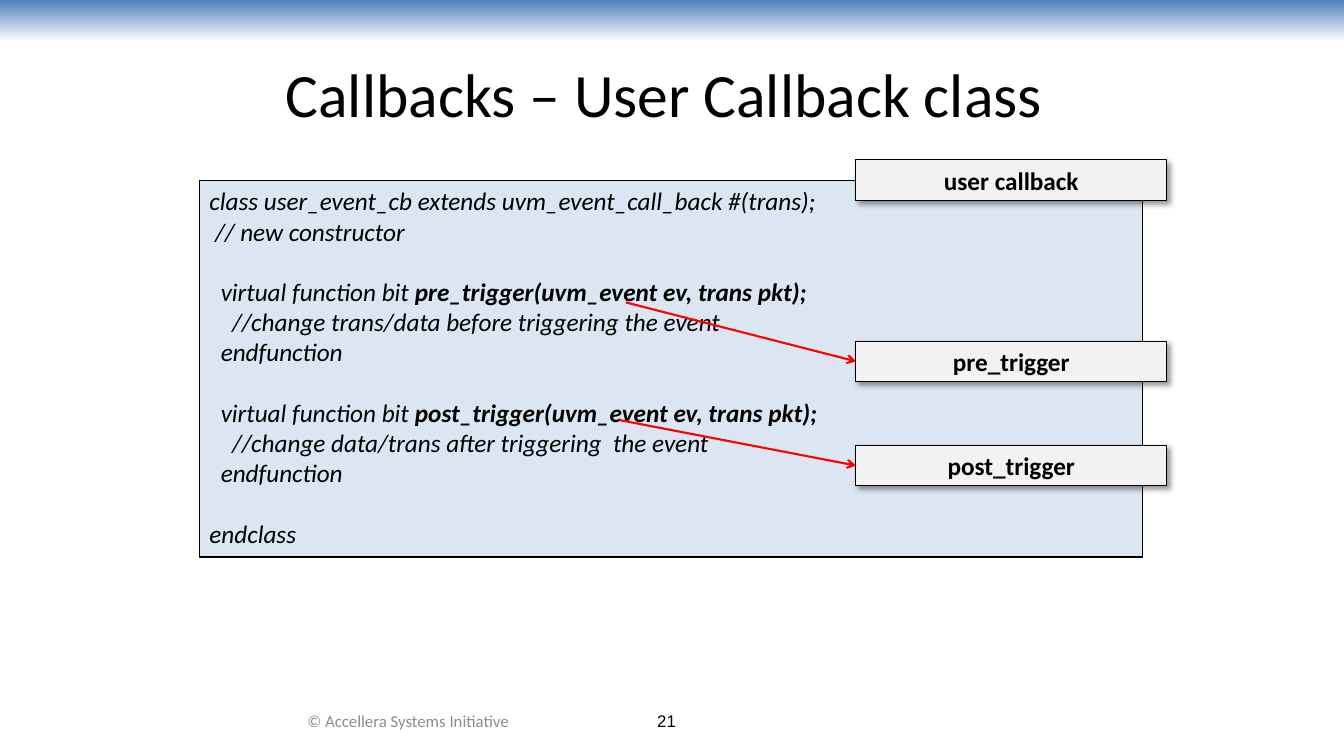
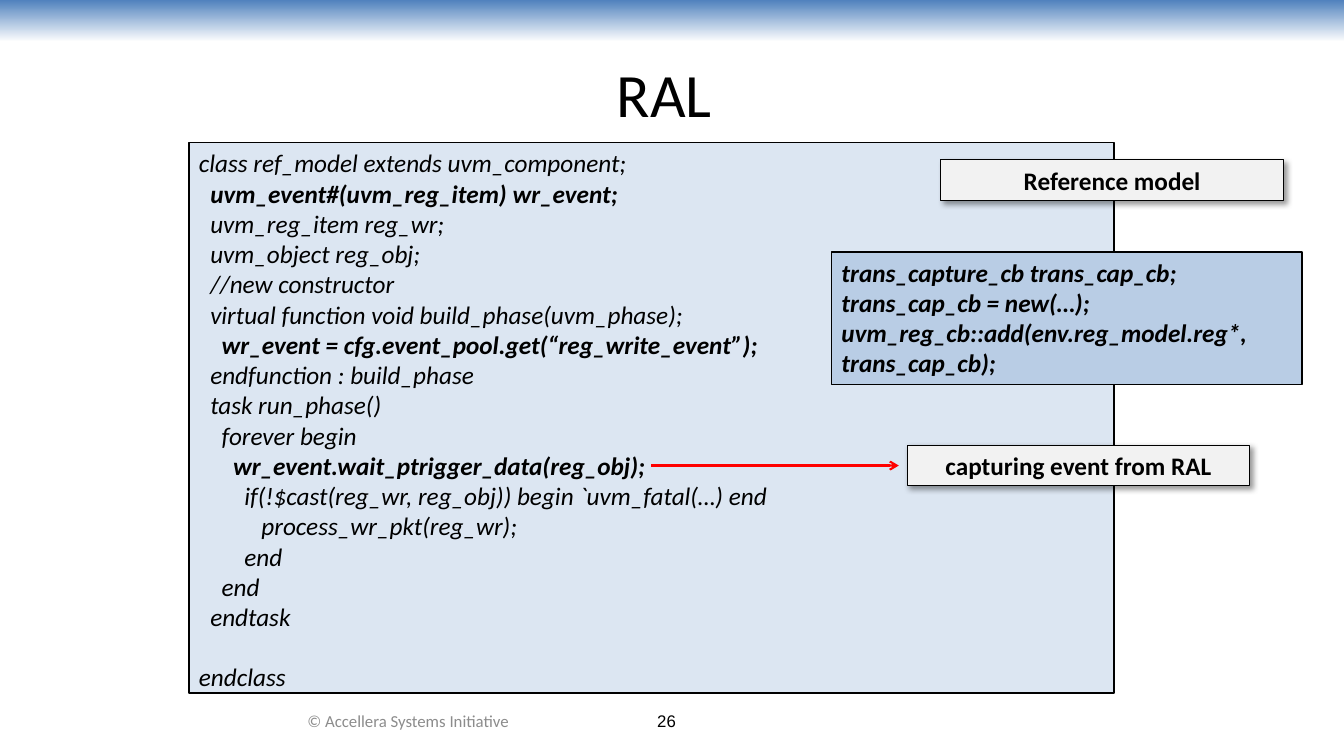
from lxml.etree import SubElement
from pptx import Presentation
from pptx.dml.color import RGBColor
from pptx.enum.shapes import MSO_CONNECTOR as CONNECTOR, MSO_SHAPE as SHAPE
from pptx.enum.text import MSO_ANCHOR as ANCHOR, PP_ALIGN as ALIGN
from pptx.oxml.ns import qn
from pptx.util import Inches, Pt

WIDTH, HEIGHT = Inches(13.33), Inches(7.5)
COLUMNS, ROWS = 160, 90
COLORS = {
    "band": "4F81BD", "white": "FFFFFF", "black": "000000", "footer": "8C8C8C",
    "code": "DCE6F2", "snippet": "B9CDE5", "tag": "F2F2F2", "arrow": "FF0000",
}
TAG_HEIGHT = 4.85
CODE_LINE = 21.6  # points

# A bar switches bold on and off in code.
CALLBACK_CODE = """
class user_event_cb extends uvm_event_call_back #(trans);
 // new constructor

  virtual function bit |pre_trigger(uvm_event ev, trans pkt);|
    //change trans/data before triggering the event
  endfunction

  virtual function bit |post_trigger(uvm_event ev, trans pkt);|
    //change data/trans after triggering  the event
  endfunction

endclass
"""
MODEL_CODE = """
class ref_model extends uvm_component;
  |uvm_event#(uvm_reg_item) wr_event;|
  uvm_reg_item reg_wr;
  uvm_object reg_obj;
  //new constructor
  virtual function void build_phase(uvm_phase);
    |wr_event = cfg.event_pool.get(“reg_write_event”);|
  endfunction : build_phase
  task run_phase()
    forever begin
|      wr_event.wait_ptrigger_data(reg_obj);|
        if(!$cast(reg_wr, reg_obj)) begin `uvm_fatal(…) end
           process_wr_pkt(reg_wr);
        end
    end
  endtask

endclass
"""
REGISTER_CODE = """
|trans_capture_cb trans_cap_cb;|
|trans_cap_cb = new(…);|
|uvm_reg_cb::add(env.reg_model.reg*, trans_cap_cb);|
"""


def rgb(name):
    return RGBColor.from_string(COLORS[name])


def place(left, top, width, height):
    """Turn grid columns and rows into slide lengths."""
    return (int(WIDTH * left / COLUMNS), int(HEIGHT * top / ROWS),
            int(WIDTH * width / COLUMNS), int(HEIGHT * height / ROWS))


def write(shape, text, size=18, font="Calibri", color="black", bold=False,
          italic=False, align=ALIGN.CENTER, anchor=ANCHOR.MIDDLE):
    """Fill a shape with text; a blank line becomes space before the next one."""
    frame = shape.text_frame
    frame.word_wrap = True
    frame.vertical_anchor = anchor
    para, gap = None, 0
    for line in text.strip("\n").split("\n"):
        if not line:
            gap += CODE_LINE
            continue
        para = frame.add_paragraph() if para else frame.paragraphs[0]
        para.alignment = align
        if gap:
            para.space_before = Pt(gap)
            gap = 0
        for index, part in enumerate(line.split("|")):
            if part:
                span = para.add_run()
                span.text = part
                span.font.name, span.font.size = font, Pt(size)
                span.font.bold = bold or index % 2 == 1
                span.font.italic = italic
                span.font.color.rgb = rgb(color)


def add_text(page, box, text, **style):
    write(page.shapes.add_textbox(*place(*box)), text, **style)


def add_panel(page, box, fill, line_width):
    panel = page.shapes.add_shape(SHAPE.RECTANGLE, *place(*box))
    panel.shadow.inherit = False
    panel.fill.solid()
    panel.fill.fore_color.rgb = rgb(fill)
    panel.line.color.rgb = rgb("black")
    panel.line.width = Pt(line_width)
    return panel


def add_code(page, box, text, fill="code"):
    write(add_panel(page, box, fill, 1), text, italic=True,
          align=ALIGN.LEFT, anchor=ANCHOR.TOP)


def add_tag(page, left, top, width, text):
    """Add a label with a soft shadow."""
    tag = add_panel(page, (left, top, width, TAG_HEIGHT), "tag", 0.75)
    effects = tag._element.spPr.find(qn("a:effectLst"))
    shadow = SubElement(effects, qn("a:outerShdw"), blurRad=str(Pt(4)),
                        dist=str(Pt(3)), dir=str(45 * 60000), algn="tl", rotWithShape="0")
    tint = SubElement(shadow, qn("a:srgbClr"), val=COLORS["black"])
    SubElement(tint, qn("a:alpha"), val="40000")
    write(tag, text, bold=True)


def add_arrow(page, start, end):
    arrow = page.shapes.add_connector(CONNECTOR.STRAIGHT, *place(*start, *end))
    arrow.line.color.rgb = rgb("arrow")
    arrow.line.width = Pt(1.5)
    SubElement(arrow.line._get_or_add_ln(), qn("a:tailEnd"), type="arrow")
    SubElement(arrow._element.spPr, qn("a:effectLst"))


def add_page(deck, title, number):
    """Add a slide with the band, title and footer that all slides share."""
    page = deck.slides.add_slide(deck.slide_layouts[6])
    band = page.shapes.add_shape(SHAPE.RECTANGLE, *place(0, 0, COLUMNS, 5))
    band.shadow.inherit = False
    band.line.fill.background()
    band.fill.gradient()
    band.fill.gradient_angle = 270
    for stop, name, position in zip(band.fill.gradient_stops, ("band", "white"), (0, 1)):
        stop.color.rgb = rgb(name)
        stop.position = position
    add_text(page, (7.1, 3.6, 144, 15), title, size=44)
    add_text(page, (29.3, 83.4, 38.6, 4.8), "© Accellera Systems Initiative",
             size=12, color="footer")
    add_text(page, (64, 83.4, 30.7, 4.8), str(number), size=12, font="Arial")
    return page


def add_callback_page(deck):
    page = add_page(deck, "Callbacks – User Callback class", 21)
    add_code(page, (23.75, 21.5, 112.3, 44.8), CALLBACK_CODE)
    left, width = 101.9, 37
    add_tag(page, left, 19, width, "user callback")
    for text, top, start in (("pre_trigger", 40.6, (74.5, 36)),
                             ("post_trigger", 53, (73.7, 50))):
        add_tag(page, left, top, width, text)
        add_arrow(page, start, (left, top + TAG_HEIGHT / 2))


def add_model_page(deck):
    page = add_page(deck, "RAL", 26)
    add_code(page, (22.5, 17, 110.1, 65.5), MODEL_CODE)
    add_code(page, (99, 30, 56, 15.75), REGISTER_CODE, fill="snippet")
    width, event_top = 40.8, 53
    add_tag(page, 112, 19, width, "Reference model")
    add_tag(page, 108, event_top, width, "capturing event from RAL")
    middle = event_top + TAG_HEIGHT / 2
    add_arrow(page, (77.5, middle), (107, middle))


def main():
    deck = Presentation()
    deck.slide_width, deck.slide_height = WIDTH, HEIGHT
    add_callback_page(deck)
    add_model_page(deck)
    deck.save("out.pptx")


if __name__ == "__main__":
    main()
